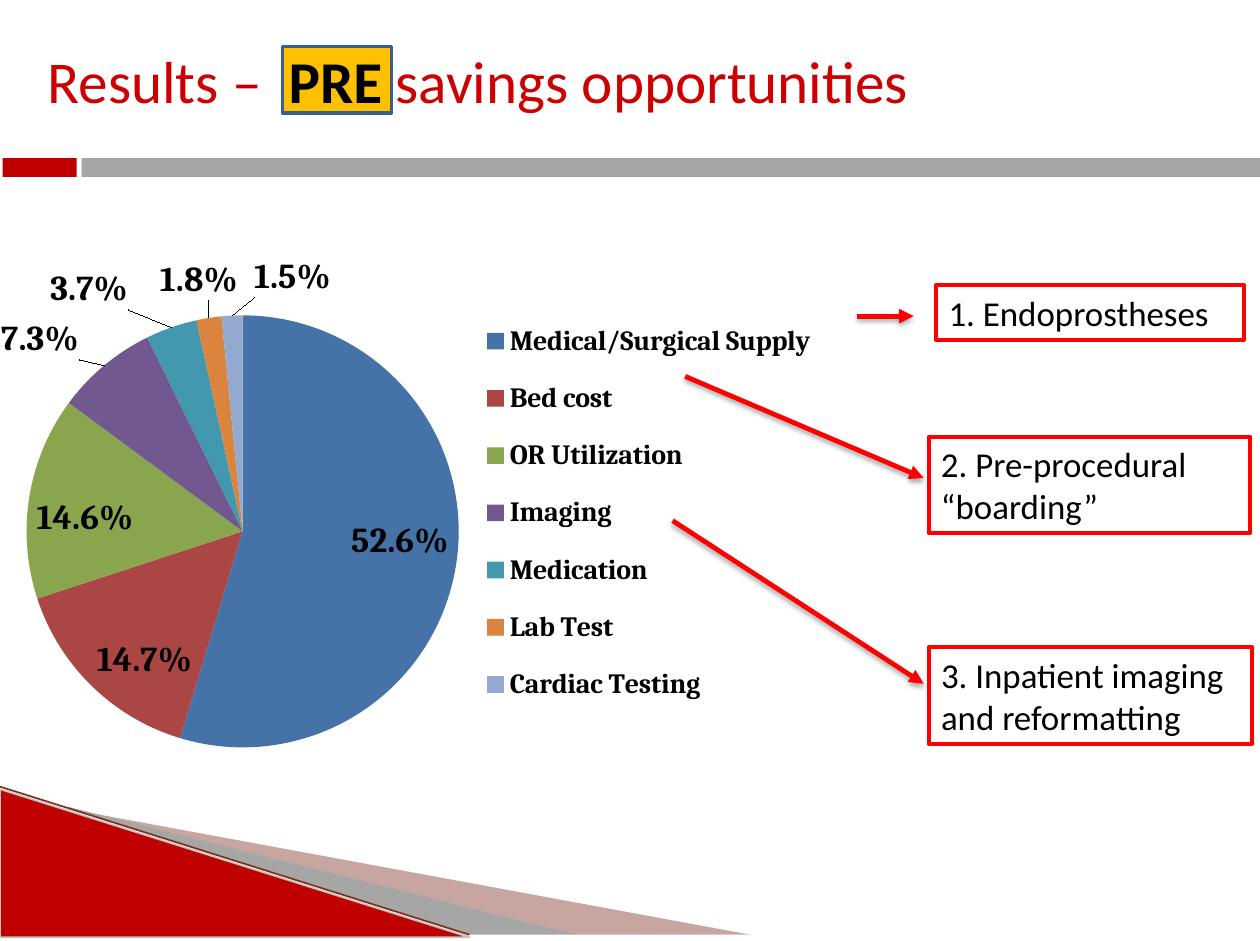
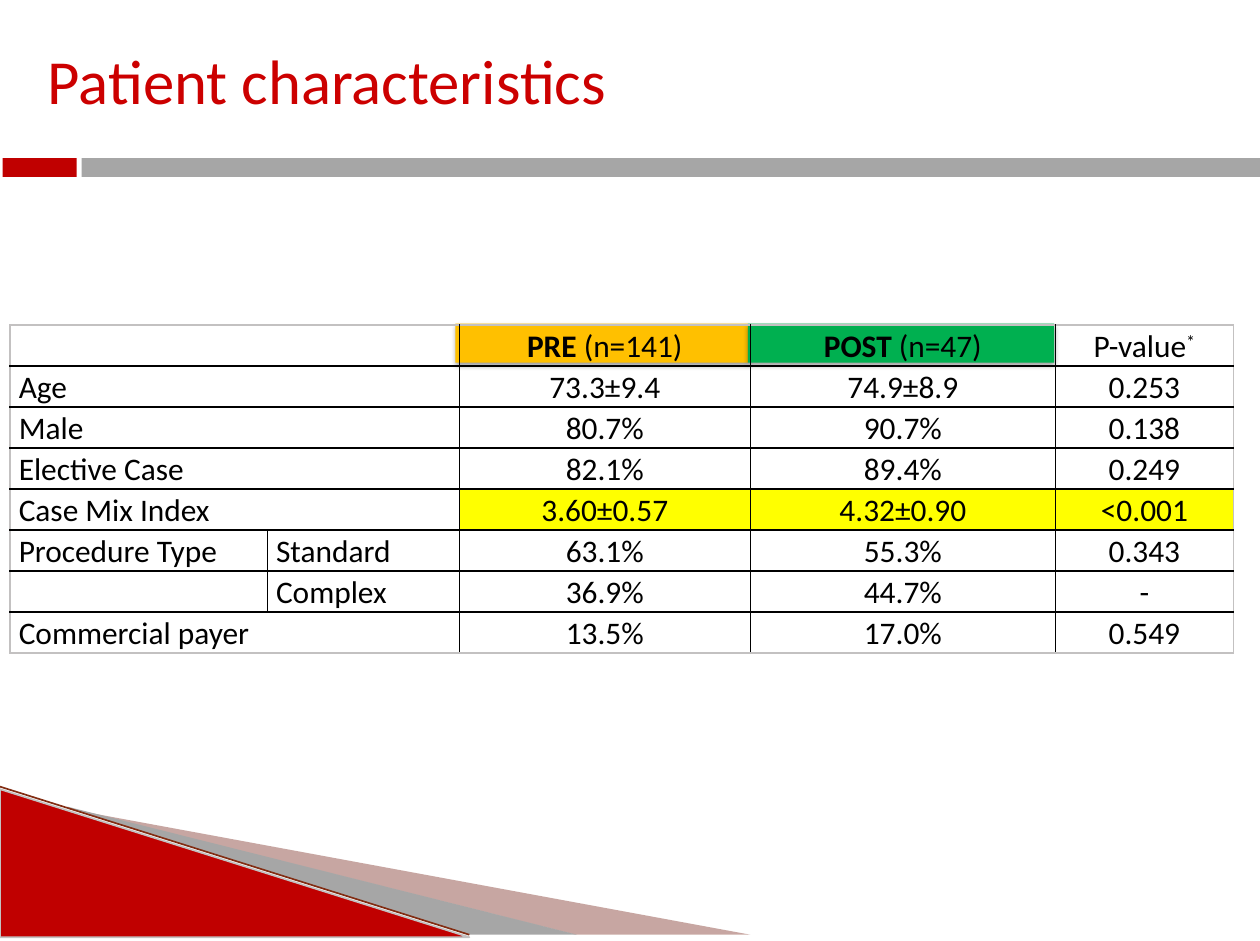
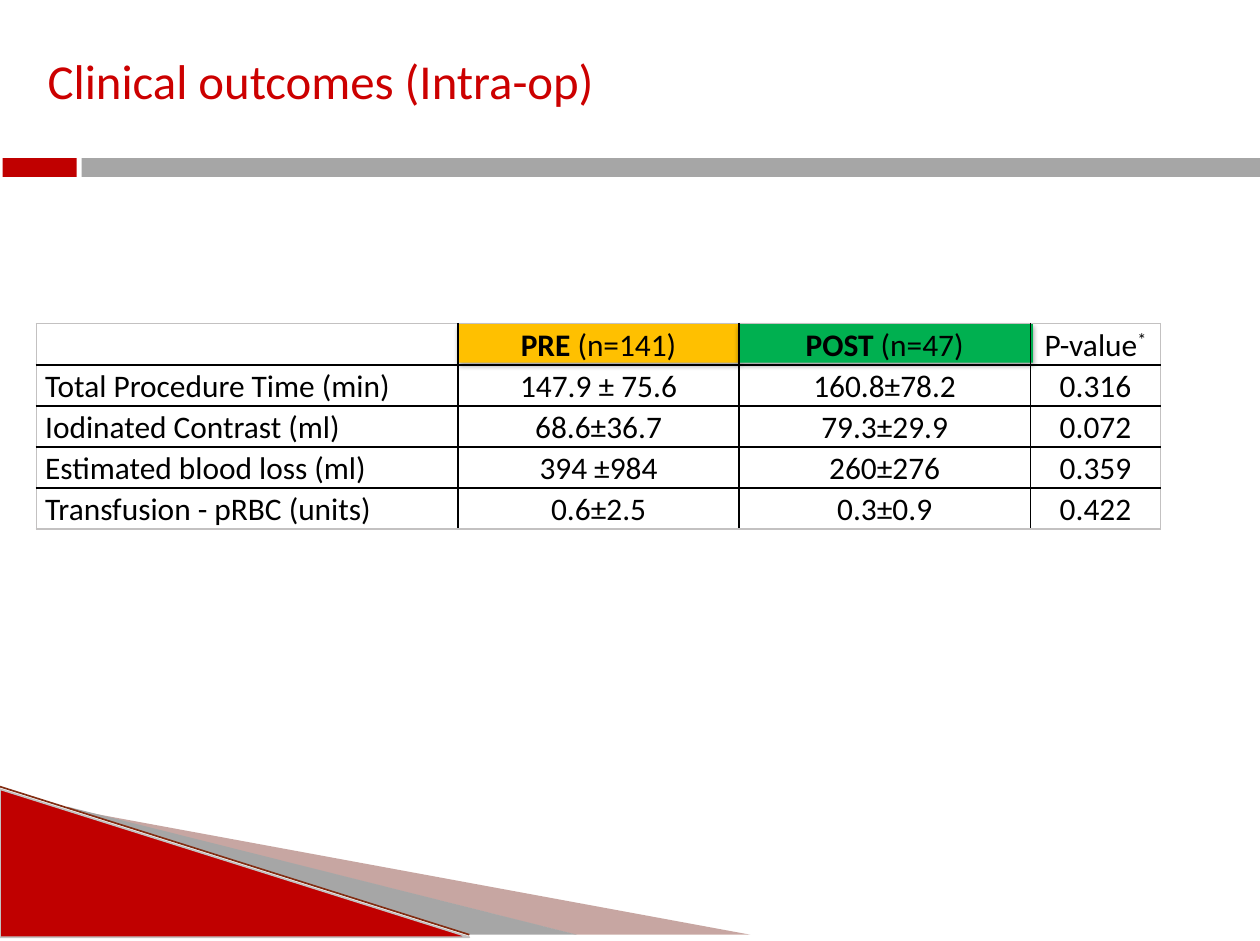
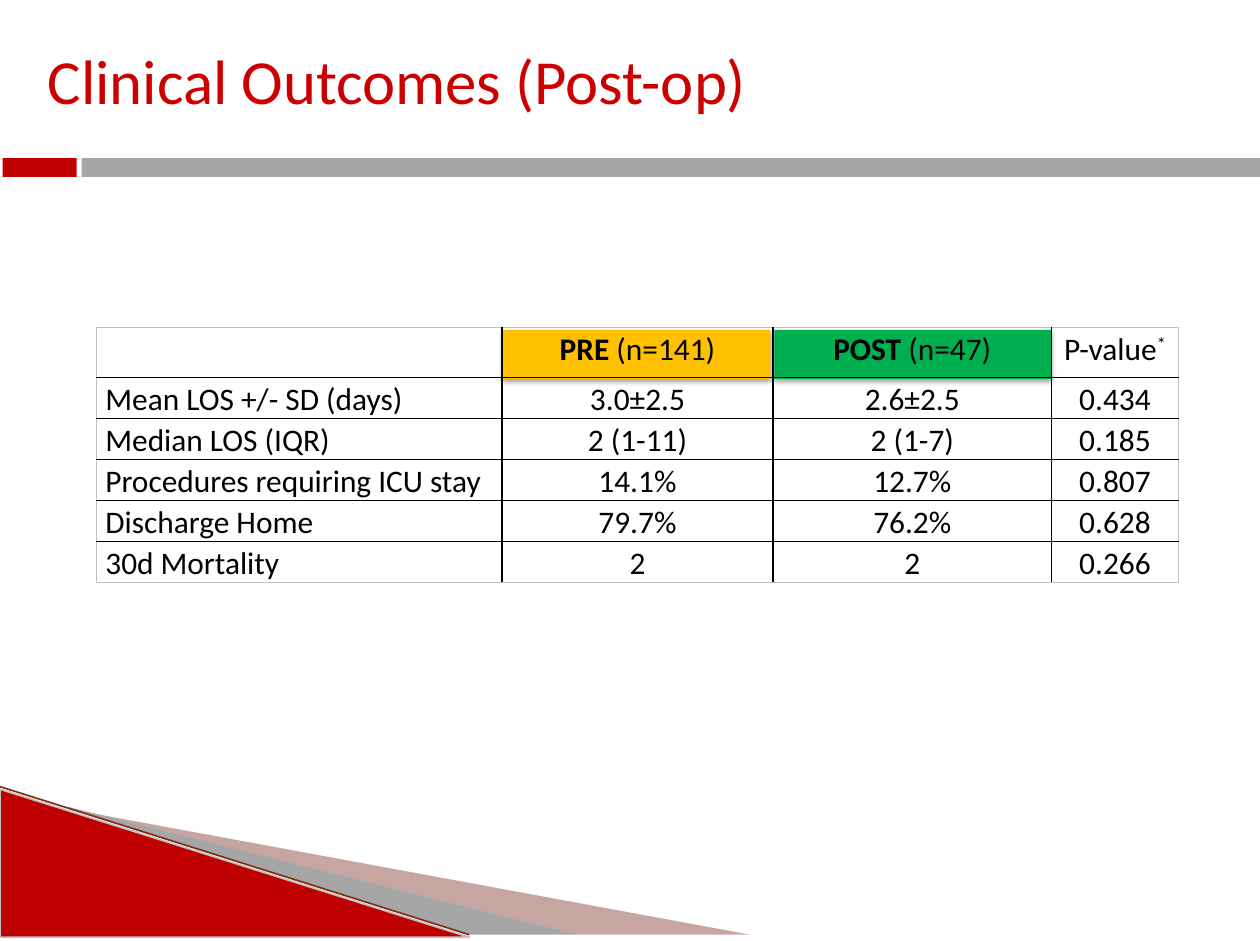
import pptx
import pptx.chart.data
import pptx.dml.color
import pptx.enum.chart
import pptx.enum.shapes
import pptx.enum.text
import pptx.oxml
import pptx.oxml.ns
import pptx.util

PX = 9144  # 100 px to the inch
RGBColor = pptx.dml.color.RGBColor
Pt = pptx.util.Pt
MSO_SHAPE = pptx.enum.shapes.MSO_SHAPE
STRAIGHT = pptx.enum.shapes.MSO_CONNECTOR.STRAIGHT
PP_ALIGN = pptx.enum.text.PP_ALIGN
LABEL_POSITION = pptx.enum.chart.XL_LABEL_POSITION
DECLARE_A = pptx.oxml.ns.nsdecls("a")
DECLARE_C = pptx.oxml.ns.nsdecls("c")

BLACK = RGBColor(0x00, 0x00, 0x00)
WHITE = RGBColor(0xFF, 0xFF, 0xFF)
TITLE_RED = RGBColor(0xCC, 0x00, 0x00)
BAND_RED = RGBColor(0xC0, 0x00, 0x00)
BAND_GREY = RGBColor(0xA6, 0xA6, 0xA6)
EDGE_GREY = RGBColor(0xC3, 0xC1, 0xC1)
BROWN = RGBColor(0x74, 0x22, 0x17)
RIDGE = RGBColor(0x82, 0x2C, 0x12)
CALLOUT_RED = RGBColor(0xFF, 0x00, 0x00)
AMBER = RGBColor(0xFF, 0xC0, 0x00)
GREEN = RGBColor(0x00, 0xB0, 0x50)
YELLOW = RGBColor(0xFF, 0xFF, 0x00)
NAVY = RGBColor(0x3A, 0x5F, 0x8C)

BOX_SHADOW = (38, 1.6)
ARROW_SHADOW = (35, 1.8)


def set_effects(shape, shadow=None):
    """Give a shape a downward (opacity %, distance pt) shadow, or no effect at all."""
    effects = ""
    if shadow:
        opacity, distance = shadow
        effects = (
            f'<a:outerShdw blurRad="{Pt(3.1)}" dist="{Pt(distance)}" dir="5400000" '
            f'rotWithShape="0"><a:srgbClr val="000000">'
            f'<a:alpha val="{opacity * 1000}"/></a:srgbClr></a:outerShdw>'
        )
    shape.element.spPr.append(
        pptx.oxml.parse_xml(f"<a:effectLst {DECLARE_A}>{effects}</a:effectLst>")
    )


def add_box(shapes, bounds, fill, line=None, weight=1, kind=MSO_SHAPE.RECTANGLE, shadow=None):
    box = shapes.add_shape(kind, *(n * PX for n in bounds))
    box.fill.solid()
    box.fill.fore_color.rgb = fill
    if line is None:
        box.line.fill.background()
    else:
        box.line.color.rgb = line
        box.line.width = Pt(weight)
    set_effects(box, shadow)
    return box


prs = pptx.Presentation()
prs.slide_width = 1004 * PX
prs.slide_height = 750 * PX
layout = prs.slide_layouts[5]

# Titles
slide_titles = [
    (34, 747, [
        ("Results", TITLE_RED, False),
        (" –  ", BAND_RED, False),
        ("PRE ", BLACK, True),
        ("savings opportunities", TITLE_RED, False),
    ]),
    (36, 724, [("Patient characteristics", TITLE_RED, False)]),
    (28, 724, [("Clinical outcomes (Intra-op)", TITLE_RED, False)]),
    (36, 724, [("Clinical Outcomes (Post-op)", TITLE_RED, False)]),
]
slides = []
for size, width, title_runs in slide_titles:
    slide = prs.slides.add_slide(layout)
    slides.append(slide)
    title = slide.shapes.title
    for side, length in {"left": 8, "top": 1, "width": width, "height": 125}.items():
        setattr(title, side, length * PX)
    title.text_frame.vertical_anchor = pptx.enum.text.MSO_ANCHOR.MIDDLE
    paragraph = title.text_frame.paragraphs[0]
    paragraph.alignment = PP_ALIGN.LEFT
    paragraph._p.get_or_add_pPr().set("marL", str(20 * PX))
    for text, color, bold in title_runs:
        run = paragraph.add_run()
        run.text = text
        run.font.color.rgb = color
        for name, value in {"name": "Calibri", "size": Pt(size), "bold": bold}.items():
            setattr(run.font, name, value)

# Corner wedges and title band, drawn once and moved to the layout
results = slides[0].shapes
decorations = []
wedges = [
    ([(56, 645), (598, 745), (459, 745), (56, 644)], BROWN, 40),
    ([(54, 643), (460, 745), (374, 745), (55, 644)], BAND_GREY, 100),
]
for points, color, opacity in wedges:
    outline = results.build_freeform(*points[0], scale=PX)
    outline.add_line_segments(points[1:], close=True)
    wedge = outline.convert_to_shape()
    wedge.fill.solid()
    wedge.fill.fore_color.rgb = color
    wedge.line.fill.background()
    set_effects(wedge)
    tint = wedge.element.xpath("./p:spPr/a:solidFill/a:srgbClr")[0]
    tint.append(pptx.oxml.parse_xml(f'<a:alpha {DECLARE_A} val="{opacity * 1000}"/>'))
    decorations.append(wedge)

decorations.append(
    add_box(results, (0, 629, 374, 118), BAND_RED, EDGE_GREY, kind=MSO_SHAPE.RIGHT_TRIANGLE)
)
ridge = results.add_connector(STRAIGHT, 0, 627 * PX, 374 * PX, 745 * PX)
ridge.line.color.rgb = RIDGE
ridge.line.width = Pt(0.95)
set_effects(ridge)
decorations.append(ridge)

for bounds, color in [
    ((0, 125, 1004, 17), WHITE),
    ((2, 126, 59, 15), BAND_RED),
    ((65, 126, 939, 15), BAND_GREY),
]:
    decorations.append(add_box(results, bounds, color))

layout_tree = layout.shapes.element
for position, decoration in enumerate(decorations):
    decoration.element.xpath(".//p:cNvPr")[0].set("id", str(100 + position))
    layout_tree.insert(2 + position, decoration.element)

# Savings opportunities: highlight behind the title
highlight = add_box(results, (225, 37, 87, 53), AMBER, NAVY, 2)
results.title.element.addprevious(highlight.element)

# Savings opportunities: cost shares
cost_shares = [
    ("Medical/Surgical Supply", 0.526, RGBColor(0x45, 0x72, 0xA7)),
    ("Bed cost", 0.147, RGBColor(0xAA, 0x46, 0x43)),
    ("OR Utilization", 0.146, RGBColor(0x89, 0xA5, 0x4E)),
    ("Imaging", 0.073, RGBColor(0x71, 0x58, 0x8F)),
    ("Medication", 0.037, RGBColor(0x41, 0x98, 0xAF)),
    ("Lab Test", 0.018, RGBColor(0xDB, 0x84, 0x3D)),
    ("Cardiac Testing", 0.015, RGBColor(0x93, 0xA9, 0xCF)),
]
label_shifts = {3: (-0.02, 0), 4: (-0.04, -0.02), 5: (0.03, -0.02), 6: (0.06, -0.02)}

cost_data = pptx.chart.data.CategoryChartData(number_format="0.0%")
cost_data.categories = [category for category, share, color in cost_shares]
cost_data.add_series("Series 1", [share for category, share, color in cost_shares])
cost_chart = results.add_chart(
    pptx.enum.chart.XL_CHART_TYPE.PIE, *(n * PX for n in (-110, 201, 809, 420)), cost_data
).chart
cost_chart.has_title = False
cost_chart.has_legend = True
cost_chart.legend.position = pptx.enum.chart.XL_LEGEND_POSITION.RIGHT
cost_chart.legend.include_in_layout = False
cost_chart.plots[0].vary_by_categories = True
cost_series = cost_chart.plots[0].series[0]
cost_labels = cost_series.data_labels
cost_labels.show_value = True
cost_labels.number_format = "0.0%"
cost_labels.number_format_is_linked = False

chart_fonts = [
    (cost_chart.font, 10, False),
    (cost_chart.legend.font, 16, True),
    (cost_labels.font, 20, True),
]
for index, (category, share, color) in enumerate(cost_shares):
    point = cost_series.points[index]
    point.format.fill.solid()
    point.format.fill.fore_color.rgb = color
    label = point.data_label
    label.position = (
        LABEL_POSITION.OUTSIDE_END if index in label_shifts else LABEL_POSITION.INSIDE_END
    )
    chart_fonts.append((label.font, 20, True))
for font, size, bold in chart_fonts:
    font.color.rgb = BLACK
    for name, value in {"name": "Cambria", "size": Pt(size), "bold": bold}.items():
        setattr(font, name, value)

plot_area = cost_chart.element.xpath("./c:chart/c:plotArea")[0]
for automatic in plot_area.xpath("./c:layout"):
    plot_area.remove(automatic)
legend = cost_chart.element.xpath("./c:chart/c:legend")[0]
for automatic in legend.xpath("./c:layout"):
    legend.remove(automatic)
edges = {"xMode": "edge", "yMode": "edge"}
manual_layouts = [
    (plot_area, 0, {"layoutTarget": "inner", **edges, "x": 0.16, "y": 0.12, "w": 0.43, "h": 0.82}),
    (legend, 1, {**edges, "x": 0.6, "y": 0.09, "w": 0.35, "h": 0.81}),
]
label_elements = cost_chart.element.xpath(".//c:dLbl")
for index, (x, y) in label_shifts.items():
    manual_layouts.append((label_elements[index], 1, {"x": x, "y": y}))
for parent, position, settings in manual_layouts:
    children = "".join(f'<c:{tag} val="{value}"/>' for tag, value in settings.items())
    parent.insert(position, pptx.oxml.parse_xml(
        f"<c:layout {DECLARE_C}><c:manualLayout>{children}</c:manualLayout></c:layout>"
    ))

# Savings opportunities: callouts and the arrows that lead to them
callouts = [
    ("1. Endoprostheses", (746, 227, 245, 44), (683, 252, 728, 252)),
    ("2. Pre-procedural “boarding”", (740, 348, 256, 77), (546, 300, 736, 381)),
    ("3. Inpatient imaging and reformatting", (740, 516, 258, 77), (536, 415, 736, 545)),
]
for text, bounds, ends in callouts:
    callout = add_box(results, bounds, WHITE, CALLOUT_RED, 2.25)
    callout.text_frame.word_wrap = True
    paragraph = callout.text_frame.paragraphs[0]
    paragraph.alignment = PP_ALIGN.LEFT
    run = paragraph.add_run()
    run.text = text
    run.font.color.rgb = BLACK
    run.font.name = "Calibri"
    run.font.size = Pt(20)

    arrow = results.add_connector(STRAIGHT, *(n * PX for n in ends))
    arrow.line.color.rgb = CALLOUT_RED
    arrow.line.width = Pt(2.75)
    arrow.line._get_or_add_ln().append(
        pptx.oxml.parse_xml(f'<a:tailEnd {DECLARE_A} type="triangle"/>')
    )
    set_effects(arrow, ARROW_SHADOW)

# Tables: a row whose second entry is None spans its first two columns
pre_heading = [("PRE", {"bold": True}), (" (n=141)", {})]
post_heading = [("POST", {"bold": True}), (" (n=47)", {})]
p_heading = [("P-value", {}), ("*", {"baseline": 30000})]
headings = [pre_heading, post_heading, p_heading]
tables = [
    {
        "origin": (8, 259),
        "columns": [205, 153, 232, 243, 142],
        "header_height": 32,
        "heading_boxes": [((363, 258, 233, 31), AMBER), ((596, 258, 244, 31), GREEN)],
        "highlighted_row": 4,
        "rows": [
            ["", None, *headings],
            ["Age", None, "73.3±9.4", "74.9±8.9", "0.253"],
            ["Male", None, "80.7%", "90.7%", "0.138"],
            ["Elective Case", None, "82.1%", "89.4%", "0.249"],
            ["Case Mix Index", None, "3.60±0.57", "4.32±0.90", "<0.001"],
            ["Procedure Type", "Standard", "63.1%", "55.3%", "0.343"],
            ["", "Complex", "36.9%", "44.7%", "-"],
            ["Commercial payer", None, "13.5%", "17.0%", "0.549"],
        ],
    },
    {
        "origin": (29, 258),
        "columns": [336, 224, 232, 104],
        "header_height": 33,
        "heading_boxes": [((366, 258, 223, 31), AMBER), ((589, 258, 234, 31), GREEN)],
        "highlighted_row": None,
        "rows": [
            ["", *headings],
            ["Total Procedure Time (min)", "147.9 ± 75.6", "160.8±78.2", "0.316"],
            ["Iodinated Contrast (ml)", "68.6±36.7", "79.3±29.9", "0.072"],
            ["Estimated blood loss (ml)", "394 ±984", "260±276", "0.359"],
            ["Transfusion - pRBC (units)", "0.6±2.5", "0.3±0.9", "0.422"],
        ],
    },
    {
        "origin": (77, 261),
        "columns": [323, 216, 222, 101],
        "header_height": 40,
        "heading_boxes": [((617, 263, 221, 39), GREEN), ((401, 263, 213, 39), AMBER)],
        "highlighted_row": None,
        "rows": [
            ["", *headings],
            ["Mean LOS +/- SD (days)", "3.0±2.5", "2.6±2.5", "0.434"],
            ["Median LOS (IQR)", "2 (1-11)", "2 (1-7)", "0.185"],
            ["Procedures requiring ICU stay", "14.1%", "12.7%", "0.807"],
            ["Discharge Home", "79.7%", "76.2%", "0.628"],
            ["30d Mortality", "2", "2", "0.266"],
        ],
    },
]
ROW_HEIGHT = 32
cell_margins = {"margin_left": 7, "margin_right": 7, "margin_top": 0, "margin_bottom": 0}

for slide, content in zip(slides[1:], tables):
    for bounds, color in content["heading_boxes"]:
        add_box(slide.shapes, bounds, color, shadow=BOX_SHADOW)

    rows, columns = content["rows"], content["columns"]
    heights = [content["header_height"]] + [ROW_HEIGHT] * (len(rows) - 1)
    bounds = (*content["origin"], sum(columns), sum(heights))
    table = slide.shapes.add_table(len(rows), len(columns), *(n * PX for n in bounds)).table
    table.first_row = False
    table.horz_banding = False
    for column, width in zip(table.columns, columns):
        column.width = width * PX
    for row, height in zip(table.rows, heights):
        row.height = height * PX

    first_value_column = len(columns) - 3
    for r, row in enumerate(rows):
        for c, entry in enumerate(row):
            cell = table.cell(r, c)
            for name, length in cell_margins.items():
                setattr(cell, name, length * PX)
            is_value = c >= first_value_column
            if is_value and r == content["highlighted_row"]:
                cell.fill.solid()
                cell.fill.fore_color.rgb = YELLOW
            else:
                cell.fill.background()

            outer_sides = {
                "lnL": c == 0,
                "lnR": c == len(columns) - 1,
                "lnT": r == 0,
                "lnB": r == len(rows) - 1,
            }
            properties = cell._tc.get_or_add_tcPr()
            for position, (side, is_outer) in enumerate(outer_sides.items()):
                color = EDGE_GREY if is_outer else BLACK
                properties.insert(position, pptx.oxml.parse_xml(
                    f'<a:{side} {DECLARE_A} w="{Pt(1)}"><a:solidFill>'
                    f'<a:srgbClr val="{color}"/></a:solidFill></a:{side}>'
                ))

            if not entry:
                continue
            paragraph = cell.text_frame.paragraphs[0]
            paragraph.alignment = PP_ALIGN.CENTER if is_value else PP_ALIGN.LEFT
            paragraph.line_spacing = 1.07
            parts = [(entry, {})] if isinstance(entry, str) else entry
            for text, emphasis in parts:
                run = paragraph.add_run()
                run.text = text
                run.font.color.rgb = BLACK
                run.font.name = "Calibri"
                run.font.size = Pt(18)
                run.font.bold = emphasis.get("bold", False)
                if "baseline" in emphasis:
                    run._r.get_or_add_rPr().set("baseline", str(emphasis["baseline"]))
        if row[1] is None:
            table.cell(r, 0).merge(table.cell(r, 1))

prs.save("out.pptx")
